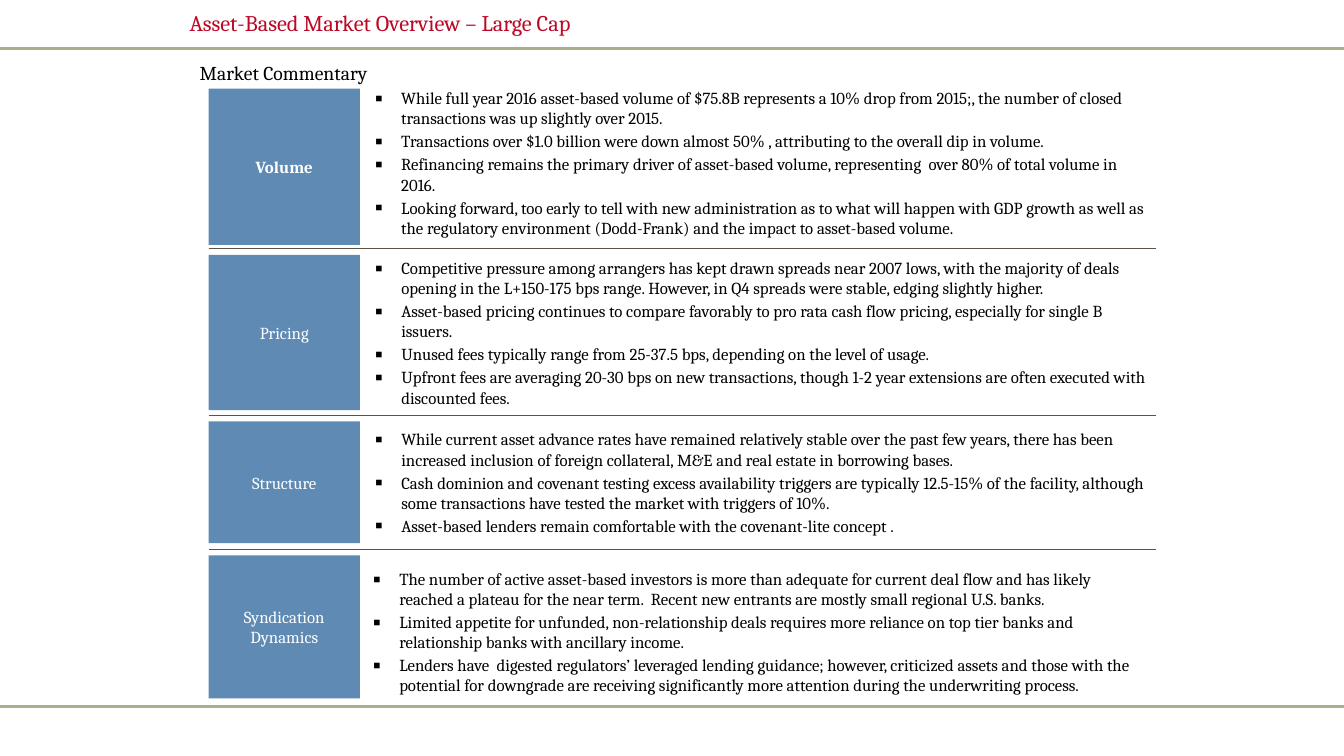
from pptx import Presentation
from pptx.dml.color import RGBColor
from pptx.enum.shapes import MSO_CONNECTOR, MSO_SHAPE
from pptx.enum.text import MSO_ANCHOR, PP_ALIGN
from pptx.oxml.ns import qn
from pptx.util import Pt
from lxml.etree import SubElement

PX = 9144
WIDE, HIGH = 1333, 750
LEFT, RIGHT = 207, 1147
TAG = 150

ROWS = [
    ("Volume", 88, 155, (165, -4, 777), [
        "While full year 2016 asset-based volume of $75.8B represents a 10% drop from 2015;, the number of closed transactions was up slightly over 2015.",
        "Transactions over $1.0 billion were down almost 50% , attributing to the overall dip in volume.",
        "Refinancing remains the primary driver of asset-based volume, representing  over 80% of total volume in 2016.",
        "Looking forward, too early to tell with new administration as to what will happen with GDP growth as well as the regulatory environment (Dodd-Frank) and the impact to asset-based volume.",
    ]),
    ("Pricing", 253, 154, (165, 0, 781), [
        "Competitive pressure among arrangers has kept drawn spreads near 2007 lows, with the majority of deals opening in the L+150-175 bps range. However, in Q4 spreads were stable, edging slightly higher.",
        "Asset-based pricing continues to compare favorably to pro rata cash flow pricing, especially for single B issuers.",
        "Unused fees typically range from 25-37.5 bps, depending on the level of usage.",
        "Upfront fees are averaging 20-30 bps on new transactions, though 1-2 year extensions are often executed with discounted fees.",
    ]),
    ("Structure", 418, 121, (165, 0, 775), [
        "While current asset advance rates have remained relatively stable over the past few years, there has been increased inclusion of foreign collateral, M&E and real estate in borrowing bases.",
        "Cash dominion and covenant testing excess availability triggers are typically 12.5-15% of the facility, although some transactions have tested the market with triggers of 10%.",
        "Asset-based lenders remain comfortable with the covenant-lite concept .",
    ]),
    ("Syndication Dynamics", 551, 142, (163, 5, 775), [
        "The number of active asset-based investors is more than adequate for current deal flow and has likely reached a plateau for the near term.  Recent new entrants are mostly small regional U.S. banks.",
        "Limited appetite for unfunded, non-relationship deals requires more reliance on top tier banks and relationship banks with ancillary income.",
        "Lenders have  digested regulators’ leveraged lending guidance; however, criticized assets and those with the potential for downgrade are receiving significantly more attention during the underwriting process.",
    ]),
]


def px(*sizes):
    return [round(size * PX) for size in sizes]


def paint(color, tint):
    color.rgb = RGBColor.from_string(tint)


def style(para, size, tint, bold=False):
    for run in para.runs:
        run.font.name = "Cambria"
        run.font.size = Pt(size)
        run.font.bold = bold
        paint(run.font.color, tint)


def inset(frame, left, top, right, bottom):
    frame.word_wrap = True
    frame.margin_left, frame.margin_top, frame.margin_right, frame.margin_bottom = px(left, top, right, bottom)


def rule(slide, left, right, y, tint, width):
    line = slide.shapes.add_connector(MSO_CONNECTOR.STRAIGHT, *px(left, y, right, y))
    paint(line.line.color, tint)
    line.line.width = Pt(width)
    SubElement(line._element.spPr, qn("a:effectLst"))


def label(slide, box, text, size, tint):
    frame = slide.shapes.add_textbox(*px(*box)).text_frame
    inset(frame, 0, 0, 0, 0)
    frame.vertical_anchor = MSO_ANCHOR.MIDDLE
    frame.text = text
    style(frame.paragraphs[0], size, tint)


def tag(slide, box, text, bold):
    shape = slide.shapes.add_shape(MSO_SHAPE.RECTANGLE, *px(*box))
    shape.shadow.inherit = False
    shape.fill.solid()
    paint(shape.fill.fore_color, "5E8AB4")
    shape.line.fill.background()
    frame = shape.text_frame
    inset(frame, 4, 5, 4, 5)
    frame.vertical_anchor = MSO_ANCHOR.MIDDLE
    frame.text = text
    para = frame.paragraphs[0]
    para.alignment = PP_ALIGN.CENTER
    style(para, 12, "FFFFFF", bold)


def bullet(para):
    props = para._p.get_or_add_pPr()
    indent = px(26)[0]
    props.set("marL", str(indent))
    props.set("indent", str(-indent))
    SubElement(SubElement(props, qn("a:buClr")), qn("a:srgbClr"), val="000000")
    SubElement(props, qn("a:buSzPct"), val="115000")
    SubElement(props, qn("a:buFont"), typeface="Cambria")
    SubElement(props, qn("a:buChar"), char="▪")


def notes(slide, box, items):
    frame = slide.shapes.add_textbox(*px(*box)).text_frame
    inset(frame, 0, 2, 5, 2)
    frame.vertical_anchor = MSO_ANCHOR.MIDDLE
    for i, item in enumerate(items):
        para = frame.add_paragraph() if i else frame.paragraphs[0]
        para.text = item
        bullet(para)
        para.space_after = Pt(2)
        style(para, 12, "000000")


def topic(slide, box, name, shift, items, first):
    left, top, right, high = box
    dx, dy, wide = shift
    if not first:
        rule(slide, left, right, top - 6, "5E5145", 0.75)
    tag(slide, (left, top, TAG, high), name, first)
    notes(slide, (left + dx, top + dy, wide, high), items)


def main():
    deck = Presentation()
    deck.slide_width, deck.slide_height = px(WIDE, HIGH)
    slide = deck.slides.add_slide(deck.slide_layouts[6])
    for y in (48, 701):
        rule(slide, 0, WIDE, y, "A9B089", 2)
    label(slide, (188, 3, 1112, 39), "Asset-Based Market Overview – Large Cap", 16, "BB0826")
    label(slide, (198, 58, 938, 28), "Market Commentary", 14, "000000")
    for i, (name, top, high, shift, items) in enumerate(ROWS):
        topic(slide, (LEFT, top, RIGHT, high), name, shift, items, i == 0)
    deck.save("out.pptx")


if __name__ == "__main__":
    main()
